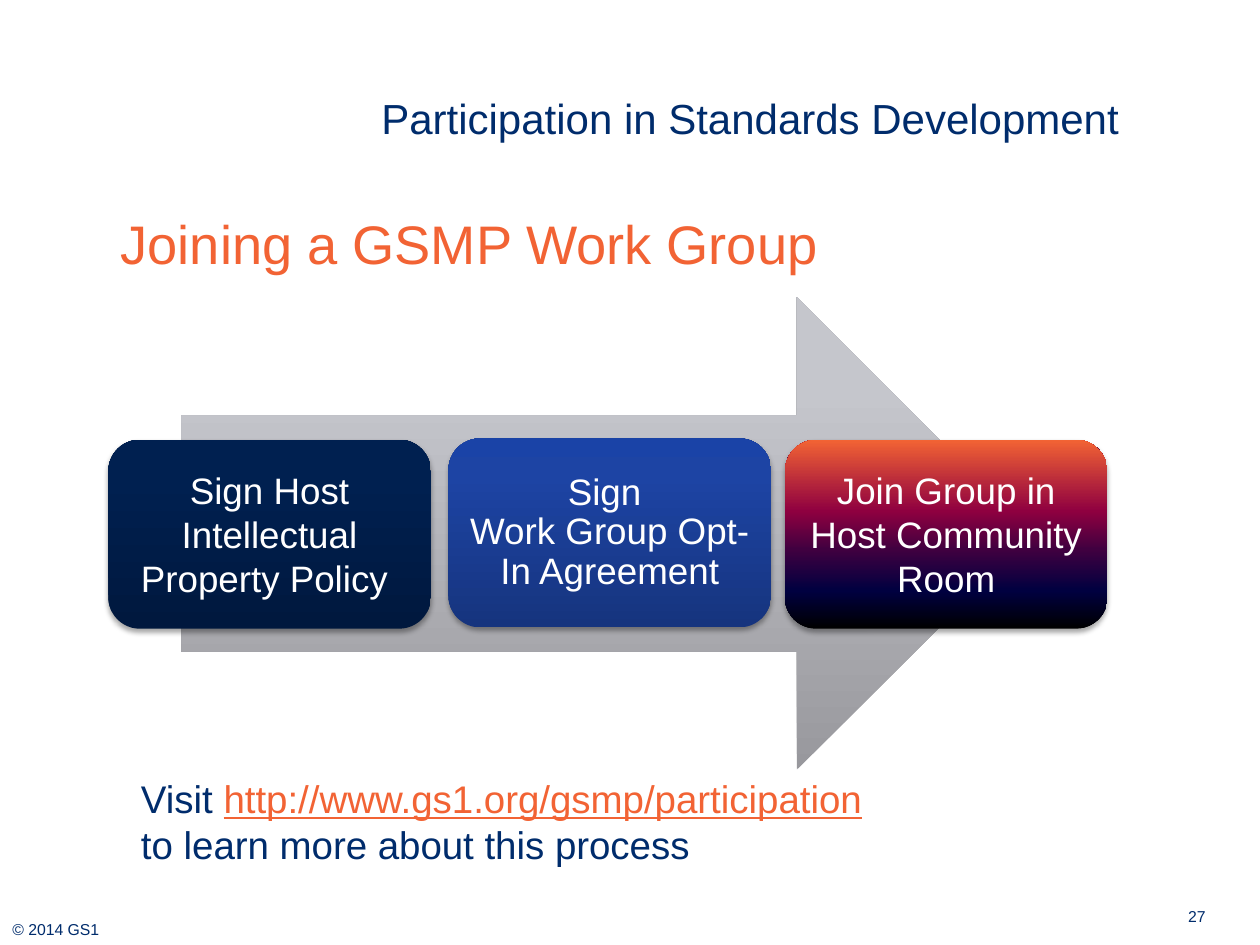
"""Build the slide on joining a work group."""
from dataclasses import dataclass

from lxml.etree import SubElement
from pptx import Presentation
from pptx.dml.color import RGBColor
from pptx.enum.shapes import MSO_AUTO_SHAPE_TYPE as Shape
from pptx.enum.text import MSO_ANCHOR as Anchor, PP_ALIGN as Align
from pptx.oxml.ns import qn
from pptx.util import Inches, Pt


@dataclass(frozen=True)
class Theme:
    font: str = "Arial"
    navy: str = "002C6C"
    orange: str = "F26334"
    white: str = "FFFFFF"
    shadow: str = "000000"
    title: int = 31
    topic: int = 24
    note: int = 22
    step: int = 21
    small: int = 9
    arrow: tuple = ((0, "98989D"), (80, "C5C6CC"), (100, "C6C7CD"))
    policy: tuple = ((0, "00183E"), (80, "002050"), (100, "002050"))
    agreement: tuple = ((0, "16347E"), (80, "1D44A4"), (100, "1A43A7"))
    group: tuple = ((0, "000000"), (20, "000040"), (42, "400040"),
                    (62, "8F0040"), (100, "F26334"), (100, "FFBF00"))


THEME = Theme()
STEPS = (
    ("Sign Host Intellectual Property Policy ", 0.86, 3.49, THEME.policy, 1),
    ("Sign \vWork Group Opt-In Agreement", 3.56, 3.48, THEME.agreement, 0.9),
    ("Join Group in Host Community Room", 6.23, 3.49, THEME.group, 1),
)


def add_color(parent, value, alpha=None):
    """Append an RGB colour, with opacity in percent if given."""
    color = SubElement(parent, qn("a:srgbClr"), val=value)
    if alpha is not None:
        SubElement(color, qn("a:alpha"), val=str(alpha * 1000))


def add_outline(slide, kind, box):
    """Add a preset shape without line or shadow."""
    shape = slide.shapes.add_shape(kind, *map(Inches, box))
    shape.shadow.inherit = False
    shape.line.fill.background()
    return shape


def fill_gradient(shape, stops):
    """Fill a shape with colour stops running from bottom to top."""
    shape.fill.gradient()
    gradient = shape.fill._xPr.find(qn("a:gradFill"))
    stop_list = gradient.find(qn("a:gsLst"))
    for old_stop in list(stop_list):
        stop_list.remove(old_stop)
    for position, color in stops:
        add_color(SubElement(stop_list, qn("a:gs"), pos=str(position * 1000)), color)
    gradient.find(qn("a:lin")).set("ang", "16200000")


def cast_shadow(shape):
    """Give a shape a soft shadow straight below it."""
    effects = shape._element.spPr.find(qn("a:effectLst"))
    shadow = SubElement(effects, qn("a:outerShdw"), blurRad=str(Pt(3.1)),
                        dist=str(Pt(1.8)), dir="5400000", rotWithShape="0")
    add_color(shadow, THEME.shadow, 35)


def style_run(run, size, color):
    """Set the typeface, size and colour of a run."""
    run.font.name = THEME.font
    run.font.size = Pt(size)
    run.font.color.rgb = RGBColor.from_string(color)


def set_text(shape, text, size, color, align=Align.LEFT, anchor=Anchor.TOP):
    """Write one wrapped paragraph into a shape and return it."""
    frame = shape.text_frame
    frame.word_wrap = True
    frame.vertical_anchor = anchor
    frame.text = text
    paragraph = frame.paragraphs[0]
    paragraph.alignment = align
    for run in paragraph.runs:
        style_run(run, size, color)
    return paragraph


def add_label(slide, box, text, size, color=THEME.navy, **layout):
    """Add a text box with one paragraph."""
    label = slide.shapes.add_textbox(*map(Inches, box))
    set_text(label, text, size, color, **layout)


def add_step(slide, text, left, top, stops, spacing):
    """Add one rounded step on the arrow."""
    step = add_outline(slide, Shape.ROUNDED_RECTANGLE, (left, top, 2.56, 1.5))
    fill_gradient(step, stops)
    cast_shadow(step)
    frame = step.text_frame
    frame.margin_left = frame.margin_right = Inches(0.09)
    paragraph = set_text(step, text, THEME.step, THEME.white, Align.CENTER, Anchor.MIDDLE)
    paragraph.line_spacing = spacing


def add_note(slide):
    """Add the translucent note with the web address."""
    note = add_outline(slide, Shape.RECTANGLE, (1.02, 6.1, 8.11, 0.84))
    note.fill.solid()
    note.fill.fore_color.rgb = RGBColor.from_string(THEME.white)
    solid = note._element.spPr.find(qn("a:solidFill"))
    SubElement(solid[0], qn("a:alpha"), val="70000")
    paragraph = set_text(note, "Visit ", THEME.note, THEME.navy, anchor=Anchor.MIDDLE)
    address = paragraph.add_run()
    address.text = "http://www.gs1.org/gsmp/participation"
    style_run(address, THEME.note, THEME.orange)
    address.font.underline = True
    space = paragraph.add_run()
    space.text = " "
    paragraph.add_line_break()
    purpose = paragraph.add_run()
    purpose.text = "to learn more about this process"
    for run in (space, purpose):
        style_run(run, THEME.note, THEME.navy)


def main():
    """Build and save the slide."""
    deck = Presentation()
    deck.slide_width, deck.slide_height = Inches(10), Inches(7.5)
    slide = deck.slides.add_slide(deck.slide_layouts[6])
    add_label(slide, (0, 7.25, 2.43, 0.25), "© 2014 GS1", THEME.small)
    arrow = add_outline(slide, Shape.RIGHT_ARROW, (1.44, 2.36, 6.76, 3.75))
    fill_gradient(arrow, THEME.arrow)
    for step in STEPS:
        add_step(slide, *step)
    add_note(slide)
    add_label(slide, (0.86, 1.42, 7.52, 1.02), "Joining a GSMP Work Group",
              THEME.title, THEME.orange, anchor=Anchor.MIDDLE)
    add_label(slide, (9, 7.15, 1, 0.35), "27", THEME.small, align=Align.CENTER)
    add_label(slide, (1.98, 0.42, 7, 1.02), "Participation in Standards Development",
              THEME.topic, align=Align.RIGHT, anchor=Anchor.MIDDLE)
    deck.save("out.pptx")


if __name__ == "__main__":
    main()
